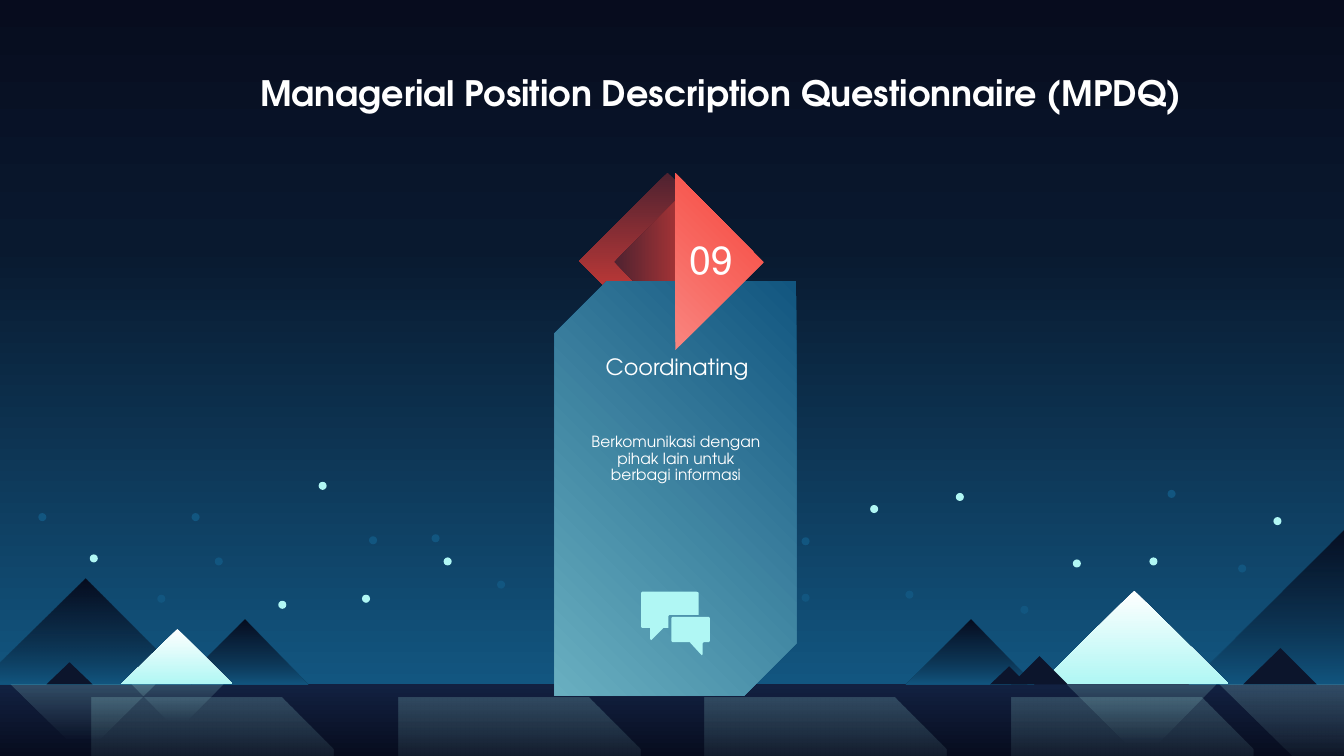
from pptx import Presentation
from pptx.dml.color import RGBColor
from pptx.enum.shapes import MSO_SHAPE
from pptx.enum.text import MSO_ANCHOR, MSO_AUTO_SIZE, PP_ALIGN
from pptx.oxml import parse_xml
from pptx.oxml.ns import nsdecls
from pptx.util import Inches, Pt

RECT, OVAL = MSO_SHAPE.RECTANGLE, MSO_SHAPE.OVAL
SNIP_ONE, SNIP_DIAGONAL = MSO_SHAPE.SNIP_1_RECTANGLE, MSO_SHAPE.SNIP_2_DIAG_RECTANGLE
LEFT, CENTER = PP_ALIGN.LEFT, PP_ALIGN.CENTER
TOP, MIDDLE = MSO_ANCHOR.TOP, MSO_ANCHOR.MIDDLE
GROW = MSO_AUTO_SIZE.SHAPE_TO_FIT_TEXT

ADVENTOR = "TeX Gyre Adventor"
WHITE, AQUA, BLUE, NAVY = "FFFFFF", "B0F7F4", "125680", "0C152C"
SKY = [(0, "070C1E", 100), (36, "09192F", 100), (100, BLUE, 100)]
DARK_PEAK = [(0, "070C1E", 100), (43, "09192F", 73), (100, BLUE, 100)]
SNOW = [(0, WHITE, 100), (100, AQUA, 100)]
GROUND = [(0, "122141", 100), (100, "070C1E", 100)]
REFLECTION = [(22, AQUA, 0), (100, AQUA, 20)]
MAROON = [(0, "4E2230", 100), (100, "F6443B", 100)]
CORAL = [(0, "F9857F", 100), (100, "F6443B", 100)]
CARD = [(0, BLUE, 100), (100, "69AFC0", 100)]
HORIZON = 6.79

prs = Presentation()
prs.slide_width, prs.slide_height = Inches(13.33), Inches(7.5)
slide = prs.slides.add_slide(prs.slide_layouts[6])
shapes = slide.shapes


def draw(outline, fill, angle=90, box=None, rotation=0, adjust=()):
    if box:
        s = shapes.add_shape(outline, *[Inches(v) for v in box])
    else:
        points = [(Inches(x), Inches(y)) for x, y in outline]
        builder = shapes.build_freeform(*points[0])
        builder.add_line_segments(points[1:], close=True)
        s = builder.convert_to_shape()
    s.rotation = rotation
    for i, value in enumerate(adjust):
        s.adjustments[i] = value
    s.shadow.inherit = False
    s.line.fill.background()
    if isinstance(fill, str):
        s.fill.solid()
        s.fill.fore_color.rgb = RGBColor.from_string(fill)
        return
    s.fill.background()
    stops = "".join(
        f'<a:gs pos="{pos * 1000}"><a:srgbClr val="{color}">'
        f'<a:alpha val="{alpha * 1000}"/></a:srgbClr></a:gs>'
        for pos, color, alpha in fill)
    gradient = parse_xml(
        f'<a:gradFill {nsdecls("a")} rotWithShape="1"><a:gsLst>{stops}</a:gsLst>'
        f'<a:lin ang="{angle * 60000}" scaled="0"/></a:gradFill>')
    blank = s._element.spPr.find("{*}noFill")
    s._element.spPr.replace(blank, gradient)


def write(text, box, size, font=ADVENTOR, bold=False, align=CENTER,
          anchor=TOP, wrap=True, spacing=None, rtl=False):
    tf = shapes.add_textbox(*[Inches(v) for v in box]).text_frame
    tf.margin_left = tf.margin_right = tf.margin_top = tf.margin_bottom = 0
    tf.word_wrap, tf.auto_size, tf.vertical_anchor = wrap, GROW, anchor
    p = tf.paragraphs[0]
    p.alignment, p.line_spacing = align, spacing
    if rtl:
        p._p.get_or_add_pPr().set("rtl", "1")
    r = p.add_run()
    r.text = text
    r.font.name, r.font.size, r.font.bold = font, Pt(size), bold
    r.font.color.rgb = RGBColor.from_string(WHITE)


draw(RECT, SKY, box=(0, 0, 13.33, HORIZON))
draw(RECT, GROUND, box=(0, HORIZON, 13.33, 0.71))

triangles = [
    (DARK_PEAK, 90, [(1.78, 3.06, 2.43, 6.15), (-0.22, 1.9, 0.85, 5.74),
                     (11.79, 15.07, 13.44, 5.16), (8.98, 10.26, 9.63, 6.15)]),
    (SNOW, 90, [(10.31, 12.19, 11.25, 5.86), (1.2, 2.31, 1.76, 6.24)]),
    (REFLECTION, 270, [(0.11, 1.54, 0.83, 7.5), (1.3, 2.22, 1.76, 7.25),
                       (10.58, 12.06, 11.33, 7.53), (12.1, 14.41, 13.27, 7.94)]),
    (NAVY, 90, [(12.33, 13.06, 12.7, 6.43), (10.03, 10.59, 10.31, 6.51),
                (9.82, 10.19, 10.01, 6.61), (0.46, 0.92, 0.69, 6.57)]),
]
for fill, angle, peaks in triangles:
    for left, right, tip_x, tip_y in peaks:
        draw([(left, HORIZON), (right, HORIZON), (tip_x, tip_y)], fill, angle)

stars = {
    AQUA: [(2.76, 5.96), (9.48, 4.89), (3.59, 5.9), (0.89, 5.5), (3.16, 4.78), (4.4, 5.53),
           (12.63, 5.13), (10.64, 5.55), (11.4, 5.53), (8.63, 5.01)],
    BLUE: [(2.13, 5.53), (4.28, 5.3), (3.66, 5.32), (8.98, 5.86), (1.9, 5.09), (1.56, 5.9),
           (10.12, 6.01), (12.28, 5.6), (11.58, 4.86), (4.93, 5.76), (7.95, 5.33),
           (0.38, 5.09), (7.95, 5.89)],
}
for color, places in stars.items():
    for x, y in places:
        draw(OVAL, color, box=(x, y, 0.08, 0.08))

write("Managerial Position Description Questionnaire (MPDQ)", (2.58, 0.71, 9.26, 0.42), 25,
      bold=True, align=LEFT, anchor=MIDDLE, wrap=False)

draw(RECT, MAROON, 45, box=(6, 1.97, 1.24, 1.24), rotation=45)
draw(RECT, MAROON, 315, box=(6.27, 2.17, 0.86, 0.86), rotation=45)
draw(SNIP_DIAGONAL, CARD, 135, box=(5.5, 2.79, 2.4, 4.11), adjust=(0.216, 0))
draw([(6.7, 1.72), (6.7, 3.47), (7.57, 2.6)], CORAL, 315)

write("Coordinating", (5.84, 3.5, 1.75, 0.27), 16, rtl=True)
write("Berkomunikasi dengan pihak lain untuk berbagi informasi", (5.83, 4.31, 1.75, 0.5), 11,
      spacing=0.9)
write("09", (6.81, 2.33, 0.48, 0.47), 28, font="Cabin", wrap=False, rtl=True)

back_bubble = [(6.93, 5.88), (6.91, 5.87), (6.37, 5.87), (6.36, 5.88), (6.36, 6.22),
               (6.37, 6.23), (6.45, 6.23), (6.45, 6.34), (6.46, 6.35), (6.47, 6.34),
               (6.58, 6.23), (6.63, 6.23), (6.63, 6.11), (6.64, 6.1), (6.93, 6.1)]
front_bubble = [(7.03, 6.12), (6.67, 6.12), (6.66, 6.13), (6.66, 6.36), (6.67, 6.37),
                (6.84, 6.37), (6.95, 6.49), (6.96, 6.5), (6.97, 6.49), (6.97, 6.38),
                (6.98, 6.37), (7.03, 6.37), (7.04, 6.36), (7.04, 6.13)]
for bubble in (back_bubble, front_bubble):
    draw(bubble, AQUA)

for i in range(4):
    draw(SNIP_ONE, REFLECTION, 270, box=(0.91 + 3.04 * i, 6.92, 2.4, 1.14), adjust=(0.449,))

prs.save("out.pptx")
